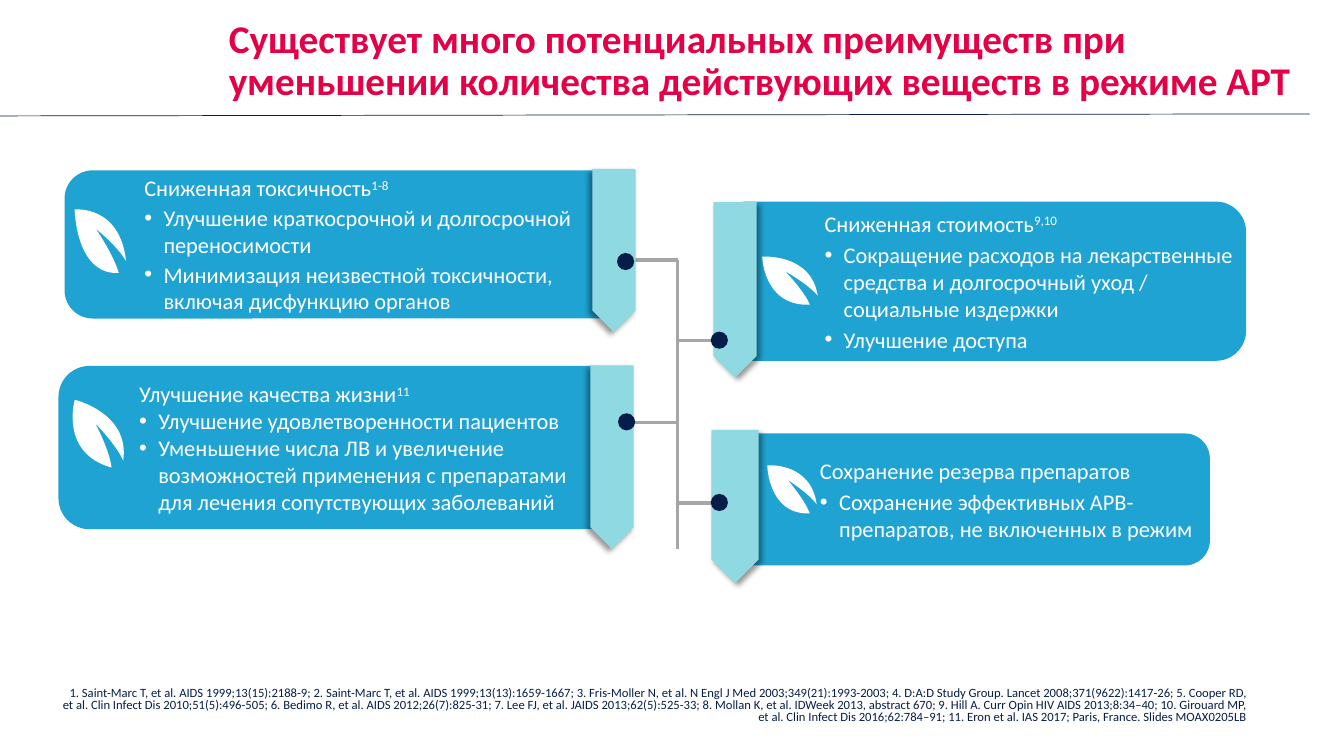
from lxml.etree import SubElement as Sub
from pptx import Presentation
from pptx.dml.color import RGBColor
from pptx.enum.shapes import MSO_CONNECTOR as Line, MSO_SHAPE as Kind
from pptx.enum.text import MSO_ANCHOR as Anchor, MSO_AUTO_SIZE as Auto, PP_ALIGN as Align
from pptx.oxml.ns import qn
from pptx.util import Inches, Pt

NAVY, RED, BLUE = "071D49", "E30046", "1FA3D3"
AQUA, GREY, WHITE = "8FD9E3", "A6A6A6", "FFFFFF"

LEAF = [
    (1, .8),
    (.88, 0), (0, .07), (0, .07),
    (0, .07), (.02, 1), (.86, .97),
    (.75, .7), (.41, .34), (.41, .34),
    (.41, .34), (.84, .59), (1, .8),
]

CARDS = [
    dict(box=(.64, 1.69, 5.65, 1.47), plate=(5.28, 2.27, 1.62, .43),
         leaf=(.74, 2.03, .51, .7), turn=0, pad=.71, gap=2, shade=135,
         head="Сниженная токсичность", note="1-8",
         items=["Улучшение краткосрочной и долгосрочной переносимости",
                "Минимизация неизвестной токсичности, включая дисфункцию органов"]),
    dict(box=(7.1, 2, 5.26, 1.58), plate=(6.42, 2.66, 1.74, .43),
         leaf=(7.56, 2.51, .55, .53), turn=0, pad=.99, gap=3, shade=45,
         head="Сниженная стоимость", note="9,10",
         items=["Сокращение расходов на лекарственные средства и долгосрочный уход / "
                "социальные издержки", "Улучшение доступа"]),
    dict(box=(7.08, 4.3, 4.92, 1.31), plate=(6.53, 4.79, 1.52, .47),
         leaf=(7.61, 4.58, .49, .53), turn=0, pad=.98, gap=3, shade=45,
         head="Сохранение резерва препаратов", note="",
         items=["Сохранение эффективных АРВ-препаратов, не включенных в режим"]),
    dict(box=(.58, 3.63, 5.65, 1.62), plate=(5.16, 4.32, 1.82, .43),
         leaf=(.65, 4.01, .64, .59), turn=17.5, pad=.71, gap=0, shade=135,
         head="Улучшение качества жизни", note="11",
         items=["Улучшение удовлетворенности пациентов",
                "Уменьшение числа ЛВ и увеличение возможностей применения с "
                "препаратами \vдля лечения сопутствующих заболеваний"]),
]

TITLE = ("Существует много потенциальных преимуществ при уменьшении "
         "количества действующих веществ в режиме АРТ")
REFS = (
    "1. Saint-Marc T, et al. AIDS 1999;13(15):2188-9; "
    "2. Saint-Marc T, et al. AIDS 1999;13(13):1659-1667; "
    "3. Fris-Moller N, et al. N Engl J Med 2003;349(21):1993-2003; "
    "4. D:A:D Study Group. Lancet 2008;371(9622):1417-26; "
    "5. Cooper RD, et al. Clin Infect Dis 2010;51(5):496-505; "
    "6. Bedimo R, et al. AIDS 2012;26(7):825-31; "
    "7. Lee FJ, et al. JAIDS 2013;62(5):525-33; "
    "8. Mollan K, et al. IDWeek 2013, abstract 670; "
    "9. Hill A. Curr Opin HIV AIDS 2013;8:34–40; "
    "10. Girouard MP, et al. Clin Infect Dis 2016;62:784–91; "
    "11. Eron et al. IAS 2017; Paris, France. Slides MOAX0205LB"
)


def paint(hue):
    return RGBColor.from_string(hue)


class Board:
    def __init__(self, deck):
        self.font = "Calibri"
        self.slide = deck.slides.add_slide(deck.slide_layouts[5])
        self.shapes = self.slide.shapes

    def ink(self, para, size, hue, bold=False):
        for run in para.runs:
            run.font.name = self.font
            run.font.size = Pt(size)
            run.font.bold = bold
            run.font.color.rgb = paint(hue)

    def frame(self, shape, pads=(0, 0, 0, 0), anchor=Anchor.TOP):
        area = shape.text_frame
        area.word_wrap = True
        area.auto_size = Auto.NONE
        area.vertical_anchor = anchor
        (area.margin_left, area.margin_top,
         area.margin_right, area.margin_bottom) = map(Inches, pads)
        return area

    def title(self, text, box):
        shape = self.shapes.title
        shape.left, shape.top, shape.width, shape.height = map(Inches, box)
        area = self.frame(shape, anchor=Anchor.BOTTOM)
        area.text = text
        para = area.paragraphs[0]
        para.alignment = Align.LEFT
        para.line_spacing = .9
        self.ink(para, 28, RED, True)

    def refs(self, text, box):
        area = self.frame(self.shapes.add_textbox(*map(Inches, box)))
        area.text = text
        para = area.paragraphs[0]
        para.alignment = Align.RIGHT
        para.line_spacing = .8
        self.ink(para, 9, NAVY)

    def line(self, ends, hue, width):
        link = self.shapes.add_connector(Line.STRAIGHT, *map(Inches, ends))
        link.line.color.rgb = paint(hue)
        link.line.width = Pt(width)
        Sub(link._element.spPr, qn("a:effectLst"))

    def fill(self, shape, hue):
        shape.shadow.inherit = False
        shape.fill.solid()
        shape.fill.fore_color.rgb = paint(hue)
        shape.line.fill.background()

    def shape(self, kind, box, hue):
        shape = self.shapes.add_shape(kind, *map(Inches, box))
        self.fill(shape, hue)
        return shape

    def leaf(self, box, turn):
        x, y, w, h = box
        dots = [(Inches(x + u * w), Inches(y + v * h)) for u, v in LEAF]
        pen = self.shapes.build_freeform(*dots[0])
        pen.add_line_segments(dots[1:], close=True)
        shape = pen.convert_to_shape()
        self.fill(shape, WHITE)
        shape.rotation = turn
        sides = list(shape._element.iter(qn("a:lnTo")))
        for i in range(0, len(LEAF) - 1, 3):
            first, *rest = sides[i:i + 3]
            first.tag = qn("a:cubicBezTo")
            for side in rest:
                first.append(side[0])
                side.getparent().remove(side)

    def plate(self, box, angle):
        shape = self.shape(Kind.PENTAGON, box, AQUA)
        shape.rotation = 90
        glow = shape._element.spPr.find(qn("a:effectLst"))
        shade = Sub(glow, qn("a:outerShdw"), blurRad=str(Pt(4)), dist=str(Pt(3)),
                    dir=str(angle * 60000), algn="ctr", rotWithShape="0")
        tone = Sub(shade, qn("a:srgbClr"), val="000000")
        Sub(tone, qn("a:alpha"), val="40000")

    def bullet(self, para):
        props = para._p.get_or_add_pPr()
        props.set("marL", str(Inches(.19)))
        props.set("indent", str(Inches(-.19)))
        Sub(props, qn("a:buFont"), typeface="Arial")
        Sub(props, qn("a:buChar"), char="•")

    def card(self, box, plate, leaf, turn, pad, gap, shade, head, note, items):
        shape = self.shape(Kind.ROUNDED_RECTANGLE, box, BLUE)
        shape.adjustments[0] = .19
        area = self.frame(shape, (pad, .05, 0, .05), Anchor.MIDDLE)
        area.text = "\n".join([head] + items)
        first = area.paragraphs[0]
        if note:
            run = first.add_run()
            run.text = note
            run._r.get_or_add_rPr().set("baseline", "30000")
        for para in area.paragraphs:
            para.alignment = Align.LEFT
            para.space_after = Pt(gap)
            if para._p is not first._p:
                self.bullet(para)
            self.ink(para, 16, WHITE)
        self.plate(plate, shade)
        self.leaf(leaf, turn)


def main():
    deck = Presentation()
    deck.slide_width, deck.slide_height = Inches(13.33), Inches(7.5)
    board = Board(deck)
    board.line((0, 1.15, 12.99, 1.13), NAVY, .5)
    board.title(TITLE, (2.27, .14, 10.84, .89))
    board.refs(REFS, (.58, 6.82, 11.78, .48))
    trunk = 6.72
    board.line((trunk, 5.45, trunk, 2.58), GREY, 2.25)
    for tip, y in [(6.06, 2.58), (7.37, 3.38), (6.06, 4.19), (7.37, 4.99)]:
        board.line((trunk, y, tip, y), GREY, 2.25)
    for card in CARDS:
        board.card(**card)
    for x, y in [(6.12, 2.51), (7.05, 3.29), (7.05, 4.9), (6.13, 4.1)]:
        board.shape(Kind.OVAL, (x, y, .17, .17), NAVY)
    deck.save("out.pptx")


if __name__ == "__main__":
    main()
